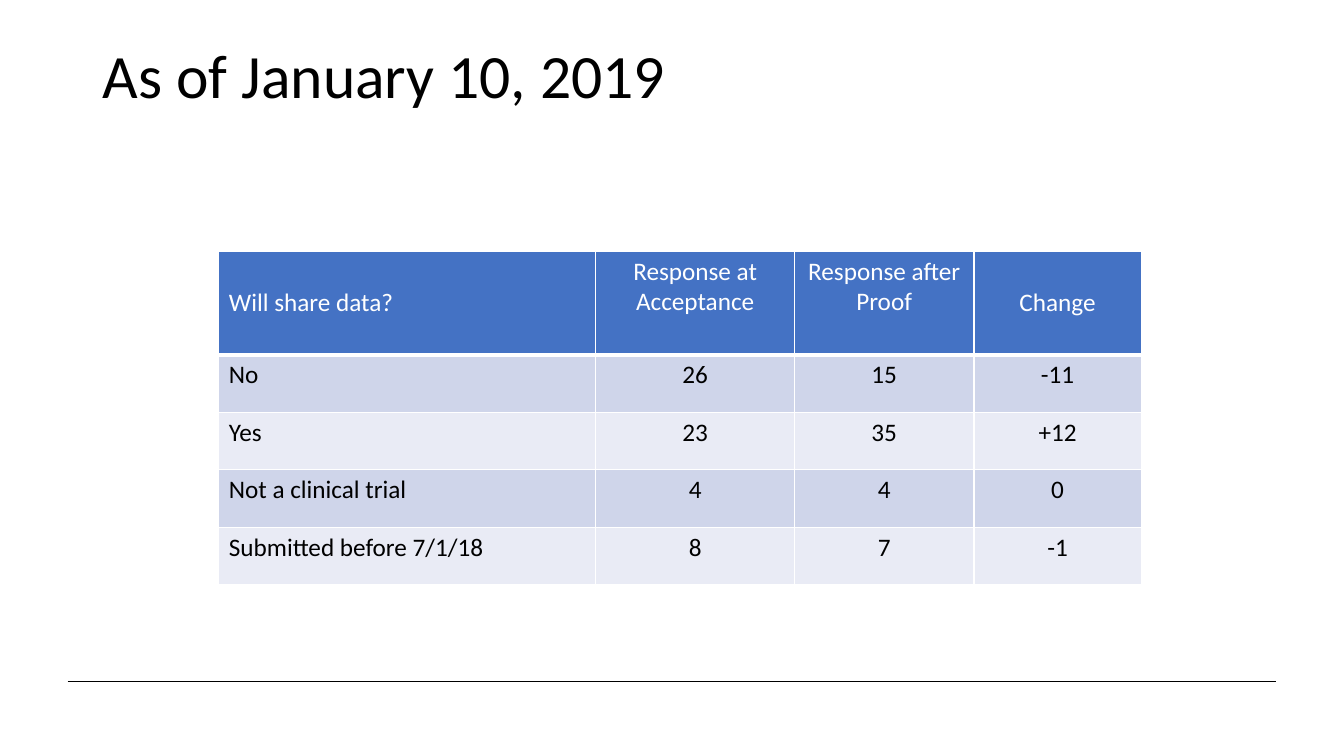
from lxml import etree
from pptx import Presentation
from pptx.dml.color import RGBColor
from pptx.enum.shapes import MSO_CONNECTOR
from pptx.enum.text import MSO_ANCHOR, MSO_AUTO_SIZE, PP_ALIGN
from pptx.oxml import parse_xml
from pptx.oxml.ns import nsdecls, qn
from pptx.util import Inches, Pt

LEFT, MID = PP_ALIGN.LEFT, PP_ALIGN.CENTER
TOP, CENTER = MSO_ANCHOR.TOP, MSO_ANCHOR.MIDDLE
NO_FIT = MSO_AUTO_SIZE.NONE
STRAIGHT = MSO_CONNECTOR.STRAIGHT

# Content
TITLE = "As of January 10, 2019"
ROWS = [
    ("Will share data?", "Response at Acceptance", "Response after Proof", "Change"),
    ("No", "26", "15", "-11"),
    ("Yes", "23", "35", "+12"),
    ("Not a clinical trial", "4", "4", "0"),
    ("Submitted before 7/1/18", "8", "7", "-1"),
]
WIDTHS = (3.74, 1.97, 1.78, 1.66)
HEAD_H, ROW_H = 1.03, 0.57
FONT = "Calibri"
COLORS = {"ink": "000000", "paper": "FFFFFF", "head": "4472C4",
          "odd": "CFD5EA", "even": "E9EBF5"}


def rgb(name):
    return RGBColor.from_string(COLORS[name])


def style(par, size, color):
    for run in par.runs:
        font = run.font
        font.name, font.size, font.bold = FONT, Pt(size), False
        font.color.rgb = rgb(color)


def edge(cell, side, points):
    # Borders come before the fill in the cell properties
    line = parse_xml(
        f'<a:{side} {nsdecls("a")} w="{Pt(points)}"><a:solidFill>'
        f'<a:srgbClr val="{COLORS["paper"]}"/></a:solidFill></a:{side}>')
    props = cell._tc.get_or_add_tcPr()
    props.insert(len(props), line)


prs = Presentation()
prs.slide_width, prs.slide_height = Inches(13.33), Inches(7.5)
slide = prs.slides.add_slide(prs.slide_layouts[5])

# Footer rule
rule = slide.shapes.add_connector(
    STRAIGHT, Inches(0.67), Inches(6.76), Inches(12.66), Inches(6.76))
rule.line.color.rgb = rgb("ink")
rule.line.width = Pt(0.25)
etree.SubElement(rule._element.spPr, qn("a:effectLst"))

# Title
title = slide.shapes.title
title.left, title.top = Inches(0.92), Inches(0.4)
title.width, title.height = Inches(11.5), Inches(1.45)
frame = title.text_frame
frame.text = TITLE
frame.auto_size, frame.vertical_anchor = NO_FIT, TOP
par = frame.paragraphs[0]
par.alignment, par.line_spacing = LEFT, 0.9
style(par, 44, "ink")

# Table
heights = [HEAD_H] + [ROW_H] * (len(ROWS) - 1)
table = slide.shapes.add_table(
    len(ROWS), len(WIDTHS), Inches(2.17), Inches(2.49),
    Inches(sum(WIDTHS)), Inches(sum(heights))).table
for col, width in zip(table.columns, WIDTHS):
    col.width = Inches(width)
for r, (words, height) in enumerate(zip(ROWS, heights)):
    table.rows[r].height = Inches(height)
    head = r == 0
    fill = "head" if head else "odd" if r % 2 else "even"
    for c, text in enumerate(words):
        cell = table.cell(r, c)
        cell.text = text
        # Outer headings fit one line and sit mid-row
        outer = head and c in (0, len(WIDTHS) - 1)
        cell.vertical_anchor = CENTER if outer else TOP
        for side in ("lnL", "lnR", "lnT", "lnB"):
            thick = (head and side == "lnB") or (r == 1 and side == "lnT")
            edge(cell, side, 3 if thick else 1)
        cell.fill.solid()
        cell.fill.fore_color.rgb = rgb(fill)
        par = cell.text_frame.paragraphs[0]
        par.alignment = MID if c else LEFT
        style(par, 18, "paper" if head else "ink")

prs.save("out.pptx")
